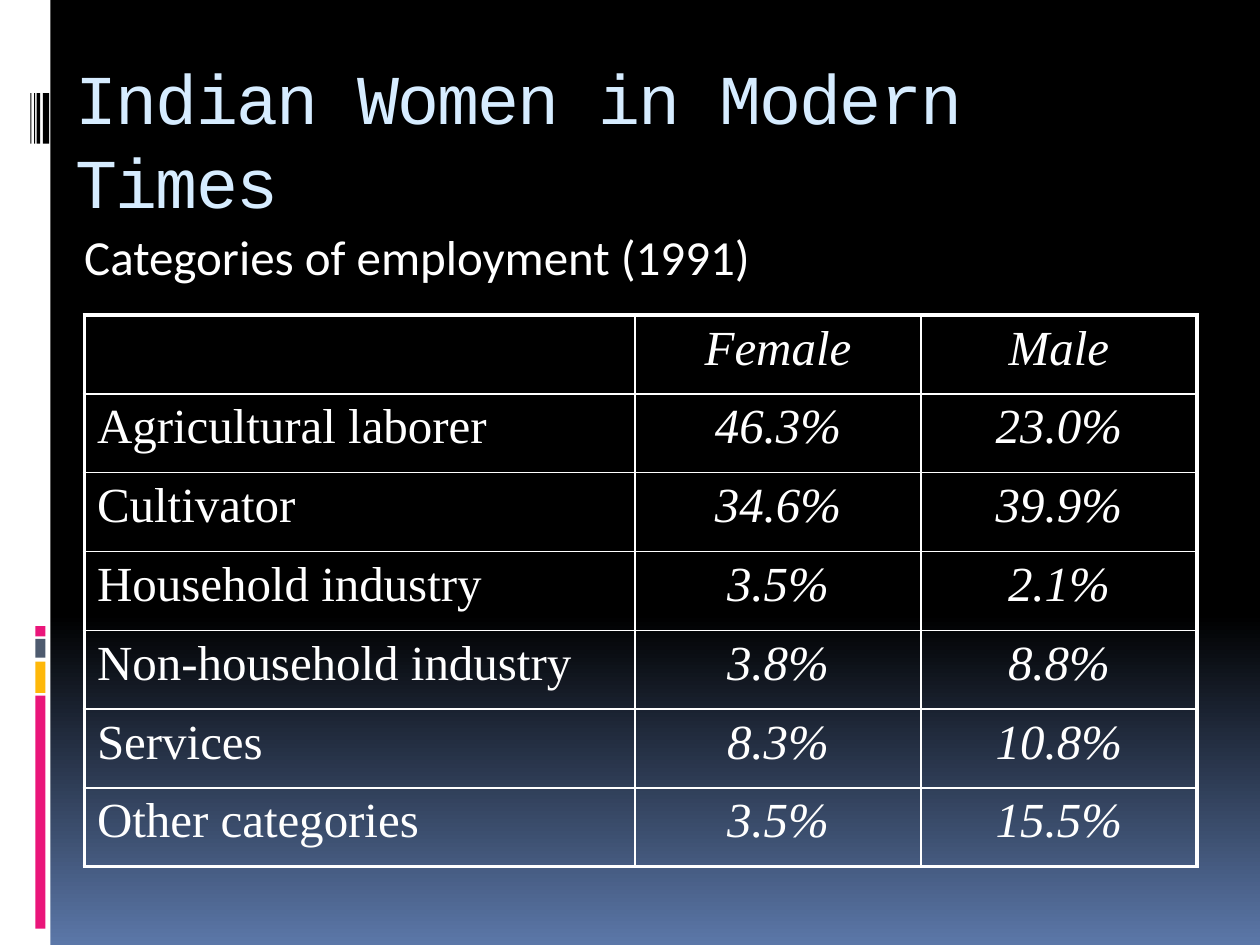
from pptx import Presentation
from pptx.dml.color import RGBColor
from pptx.enum.shapes import MSO_SHAPE as Preset
from pptx.enum.text import PP_ALIGN as Align
from pptx.oxml.ns import qn
from pptx.util import Inches, Pt
from lxml.etree import SubElement

WHITE, BLACK, PINK, AMBER, SLATE = "FFFFFF", "000000", "EA157A", "FEB80A", "4E5B6F"
ROWS = [
    ("", "Female", "Male"),
    ("Agricultural laborer", "46.3%", "23.0%"),
    ("Cultivator", "34.6%", "39.9%"),
    ("Household industry", "3.5%", "2.1%"),
    ("Non-household industry", "3.8%", "8.8%"),
    ("Services", "8.3%", "10.8%"),
    ("Other categories", "3.5%", "15.5%"),
]
COLUMN_WIDTHS = (4.37, 2.27, 2.19)


def color(value):
    return RGBColor.from_string(value)


def inches(box):
    return [Inches(length) for length in box]


def write(frame, text, *, font, size, fill=WHITE, italic=False, align=Align.LEFT,
          before=0, line=None, tracking=None):
    frame.word_wrap = True
    para = frame.paragraphs[0]
    para.alignment = align
    para.space_before = Pt(before)
    if line:
        para.line_spacing = Pt(line)
    span = para.add_run()
    span.text = text
    span.font.name = font
    span.font.size = Pt(size)
    span.font.italic = italic
    span.font.color.rgb = color(fill)
    if tracking:
        span.font._element.set("spc", str(tracking * 100))
    return para


def add_bar(page, box, fill):
    bar = page.shapes.add_shape(Preset.RECTANGLE, *inches(box))
    bar.shadow.inherit = False
    bar.fill.solid()
    bar.fill.fore_color.rgb = color(fill)
    bar.line.fill.background()


def add_background(page):
    fill = page.background.fill
    fill.gradient()
    fill.gradient_angle = 270
    for stop, (position, value) in zip(fill.gradient_stops, [(0.65, BLACK), (1, "5B77A8")]):
        stop.position = position
        stop.color.rgb = color(value)


def add_side_strip(page, box):
    left, top, width, height = box
    add_bar(page, box, WHITE)
    for offset, length, fill in [(5.52, 1.85, PINK), (5.25, 0.25, AMBER),
                                 (5.07, 0.15, SLATE), (4.97, 0.08, PINK)]:
        add_bar(page, (left + 0.28, top + offset, 0.08, length), fill)
    for offset, thickness in [(0.34, 0.05), (0.29, 0.03), (0.27, 0.01), (0.24, 0.01)]:
        add_bar(page, (left + offset, top + 0.74, thickness, 0.4), BLACK)


def add_title(page, box, text):
    frame = page.shapes.add_textbox(*inches(box)).text_frame
    frame.margin_top = Inches(0.13)
    write(frame, text, font="Courier New", size=40, fill="D6ECFF", line=48, tracking=-1)


def add_subtitle(page, box, text):
    frame = page.shapes.add_textbox(*inches(box)).text_frame
    para = write(frame, text, font="Calibri", size=28, before=7)
    properties = para._p.get_or_add_pPr()
    properties.set("marL", str(Inches(0.45)))
    properties.set("indent", str(Inches(-0.38)))


def add_borders(cell, widths):
    properties = cell._tc.get_or_add_tcPr()
    for position, (side, width) in enumerate(widths.items()):
        border = properties.makeelement(qn(f"a:{side}"), {"w": str(Pt(width))})
        fill = SubElement(border, qn("a:solidFill"))
        SubElement(fill, qn("a:srgbClr"), val=WHITE)
        properties.insert(position, border)


def add_employment_table(page, box, rows):
    table = page.shapes.add_table(len(rows), len(COLUMN_WIDTHS), *inches(box)).table
    table.first_row = table.horz_banding = False
    for column, width in zip(table.columns, COLUMN_WIDTHS):
        column.width = Inches(width)
    last_row, last_column = len(rows) - 1, len(COLUMN_WIDTHS) - 1
    for r, values in enumerate(rows):
        for c, value in enumerate(values):
            cell = table.cell(r, c)
            cell.fill.background()
            outer = {"lnL": c == 0, "lnR": c == last_column,
                     "lnT": r == 0, "lnB": r == last_row}
            add_borders(cell, {side: 2.25 if edge else 1 for side, edge in outer.items()})
            if value:
                write(cell.text_frame, value, font="Times New Roman", size=28,
                      italic=c > 0, align=Align.CENTER if c else Align.LEFT, before=5.6)


def main():
    deck = Presentation()
    deck.slide_width, deck.slide_height = Inches(10), Inches(7.5)
    page = deck.slides.add_slide(deck.slide_layouts[6])
    add_background(page)
    add_side_strip(page, (0, 0, 0.4, 7.5))
    add_title(page, (0.5, 0.3, 9, 1.25), "Indian Women in Modern Times")
    add_subtitle(page, (0.5, 1.75, 5.58, 4.95), "Categories of employment (1991)")
    add_employment_table(page, (0.67, 2.5, 8.83, 4.38), ROWS)
    deck.save("out.pptx")


if __name__ == "__main__":
    main()
